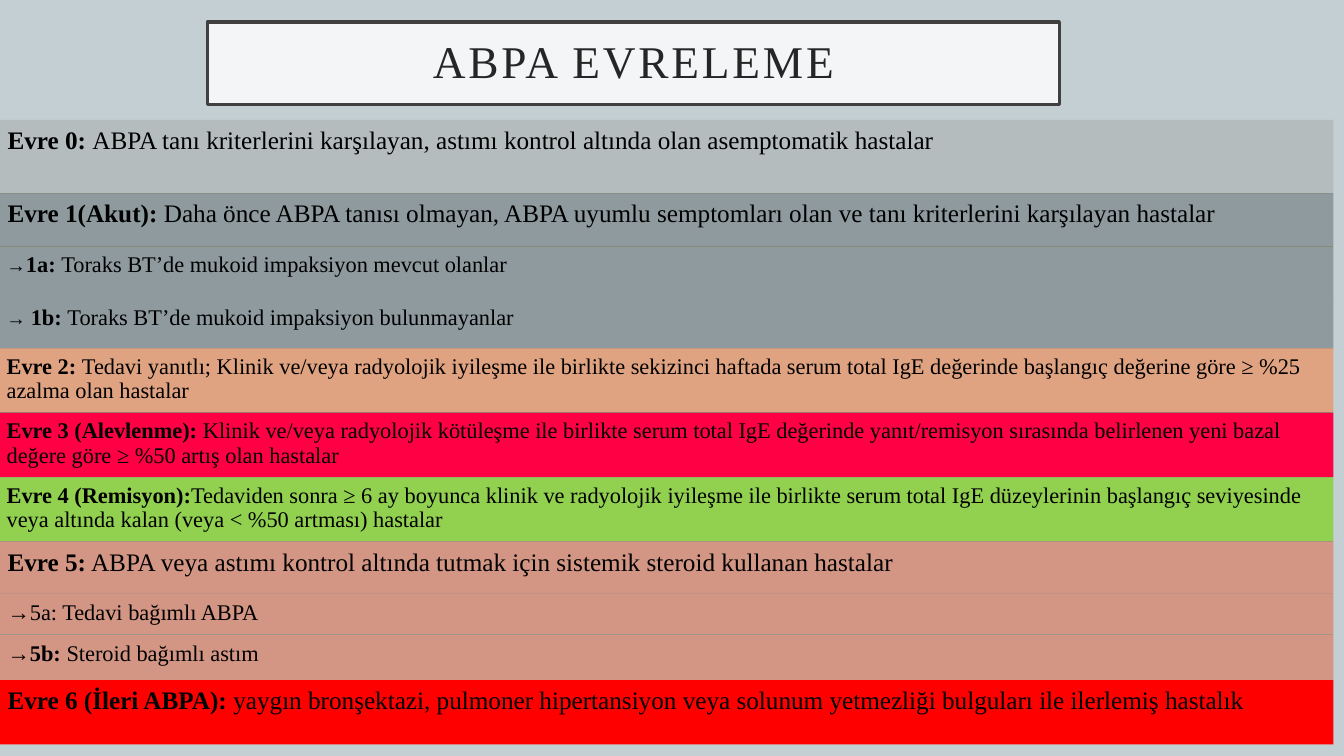
from dataclasses import dataclass

import pptx
import pptx.dml.color
import pptx.enum.shapes
import pptx.enum.text
import pptx.oxml.ns
import pptx.util
from lxml import etree

Pt = pptx.util.Pt
RGBColor = pptx.dml.color.RGBColor
PP_ALIGN = pptx.enum.text.PP_ALIGN
MSO_ANCHOR = pptx.enum.text.MSO_ANCHOR
qn = pptx.oxml.ns.qn

FONT = "Times New Roman"
BACKGROUND = RGBColor(0xC3, 0xCF, 0xD3)
WHITE = RGBColor(0xFF, 0xFF, 0xFF)
BLACK = RGBColor(0x00, 0x00, 0x00)
TITLE_TEXT = RGBColor(0x26, 0x26, 0x26)
TITLE_BORDER = RGBColor(0x40, 0x40, 0x40)
LIGHT_GREY = RGBColor(0xB4, 0xBC, 0xBE)
GREY = RGBColor(0x8E, 0x9A, 0x9E)
ORANGE = RGBColor(0xE0, 0xA3, 0x82)
CRIMSON = RGBColor(0xFF, 0x00, 0x44)
GREEN = RGBColor(0x92, 0xD0, 0x50)
ROSE = RGBColor(0xD3, 0x96, 0x85)
RED = RGBColor(0xFF, 0x00, 0x00)
FIRST_RULE = RGBColor(0x87, 0x79, 0x5D)
LAST_RULE = RGBColor(0xA0, 0x98, 0x8C)

ROWS_TOP = 85.7
ROW_WIDTH = 952.5


@dataclass
class Stage:
    height: float
    fill: RGBColor
    label: str
    text: str
    size: float = 16
    inset: float = 4.8
    arrow: str = ""
    arrow_size: float = 16


STAGES = [
    Stage(52.5, LIGHT_GREY, "Evre 0: ",
          "ABPA tanı kriterlerini karşılayan, astımı kontrol altında olan "
          "asemptomatik hastalar", 18, 5.4),
    Stage(38, GREY, "Evre 1(Akut): ",
          "Daha önce ABPA tanısı olmayan, ABPA uyumlu semptomları olan ve tanı "
          "kriterlerini karşılayan hastalar", 18, 5.4),
    Stage(38.2, GREY, "1a: ", "Toraks BT’de mukoid impaksiyon mevcut olanlar",
          inset=4.5, arrow="→", arrow_size=14),
    Stage(34.5, GREY, "1b: ", "Toraks BT’de mukoid impaksiyon bulunmayanlar",
          inset=4.5, arrow="→ ", arrow_size=14),
    Stage(46, ORANGE, "Evre 2: ",
          "Tedavi yanıtlı; Klinik ve/veya radyolojik iyileşme ile birlikte "
          "sekizinci haftada serum total IgE değerinde başlangıç değerine göre "
          "≥ %25 azalma olan hastalar"),
    Stage(46, CRIMSON, "Evre 3 (Alevlenme): ",
          "Klinik ve/veya radyolojik kötüleşme ile birlikte serum total IgE "
          "değerinde yanıt/remisyon sırasında belirlenen yeni bazal değere göre "
          "≥ %50 artış olan hastalar"),
    Stage(46, GREEN, "Evre 4 (Remisyon):",
          "Tedaviden sonra ≥ 6 ay boyunca klinik ve radyolojik iyileşme ile "
          "birlikte serum total IgE düzeylerinin başlangıç seviyesinde veya "
          "altında kalan (veya < %50 artması) hastalar"),
    Stage(37, ROSE, "Evre 5:",
          " ABPA veya astımı kontrol altında tutmak için sistemik steroid "
          "kullanan hastalar", 18, 5.4),
    Stage(29.5, ROSE, "", "5a: Tedavi bağımlı ABPA", inset=5.4, arrow="→"),
    Stage(32.4, ROSE, "5b: ", "Steroid bağımlı astım", inset=5.4, arrow="→"),
    Stage(46, RED, "Evre 6 (İleri ABPA): ",
          "yaygın bronşektazi, pulmoner hipertansiyon veya solunum yetmezliği "
          "bulguları ile ilerlemiş hastalık", 18, 5.4),
]


def add_box(s, left: float, top: float, width: float, height: float,
            fill: RGBColor, inset: float):
    """Add a filled rectangle without outline, with equal text margins."""
    sp = s.shapes.add_shape(pptx.enum.shapes.MSO_SHAPE.RECTANGLE,
                            Pt(left), Pt(top), Pt(width), Pt(height))
    sp.shadow.inherit = False
    sp.fill.solid()
    sp.fill.fore_color.rgb = fill
    sp.line.fill.background()
    tf = sp.text_frame
    tf.word_wrap = True
    tf.margin_left = tf.margin_right = Pt(inset)
    tf.margin_top = tf.margin_bottom = Pt(inset)
    p = tf.paragraphs[0]
    p.line_spacing = 0.9
    p.font.name = FONT
    return sp


def add_title(s) -> None:
    sp = add_box(s, 148.3, 15.8, 608.4, 59, WHITE, 14.4)
    color = sp.fill._xPr.find(qn("a:solidFill"))[0]
    etree.SubElement(color, qn("a:alpha")).set("val", "80000")
    sp.line.color.rgb = TITLE_BORDER
    sp.line.width = Pt(2.5)
    sp.text_frame.vertical_anchor = MSO_ANCHOR.MIDDLE
    p = sp.text_frame.paragraphs[0]
    p.alignment = PP_ALIGN.CENTER
    p.font.size = Pt(32.4)
    p.font.color.rgb = TITLE_TEXT
    r = p.add_run()
    r.text = "ABPA EVRELEME"
    r._r.get_or_add_rPr().set("spc", "200")


def add_rule(s, top: float, color: RGBColor) -> None:
    line = s.shapes.add_connector(pptx.enum.shapes.MSO_CONNECTOR.STRAIGHT,
                                  Pt(0), Pt(top), Pt(ROW_WIDTH), Pt(top))
    line.line.color.rgb = color
    line.line.width = Pt(0.5)
    etree.SubElement(line._element.spPr, qn("a:effectLst"))


def add_stage(s, stage: Stage, top: float) -> None:
    sp = add_box(s, 0, top, ROW_WIDTH, stage.height, stage.fill, stage.inset)
    sp.text_frame.vertical_anchor = MSO_ANCHOR.TOP
    p = sp.text_frame.paragraphs[0]
    p.alignment = PP_ALIGN.LEFT
    p.font.color.rgb = BLACK
    for text, size, bold in ((stage.arrow, stage.arrow_size, False),
                             (stage.label, stage.size, True),
                             (stage.text, stage.size, False)):
        if text:
            r = p.add_run()
            r.text = text
            r.font.size = Pt(size)
            r.font.bold = bold


def blend(start: RGBColor, end: RGBColor, share: float) -> RGBColor:
    return RGBColor(*(round(a + (b - a) * share) for a, b in zip(start, end)))


def main() -> None:
    prs = pptx.Presentation()
    prs.slide_width, prs.slide_height = Pt(960), Pt(540)
    s = prs.slides.add_slide(prs.slide_layouts[6])
    s.background.fill.solid()
    s.background.fill.fore_color.rgb = BACKGROUND
    add_title(s)
    top = ROWS_TOP
    for i, stage in enumerate(STAGES):
        add_rule(s, top, blend(FIRST_RULE, LAST_RULE, i / (len(STAGES) - 1)))
        add_stage(s, stage, top)
        top += stage.height
    prs.save("out.pptx")


if __name__ == "__main__":
    main()
